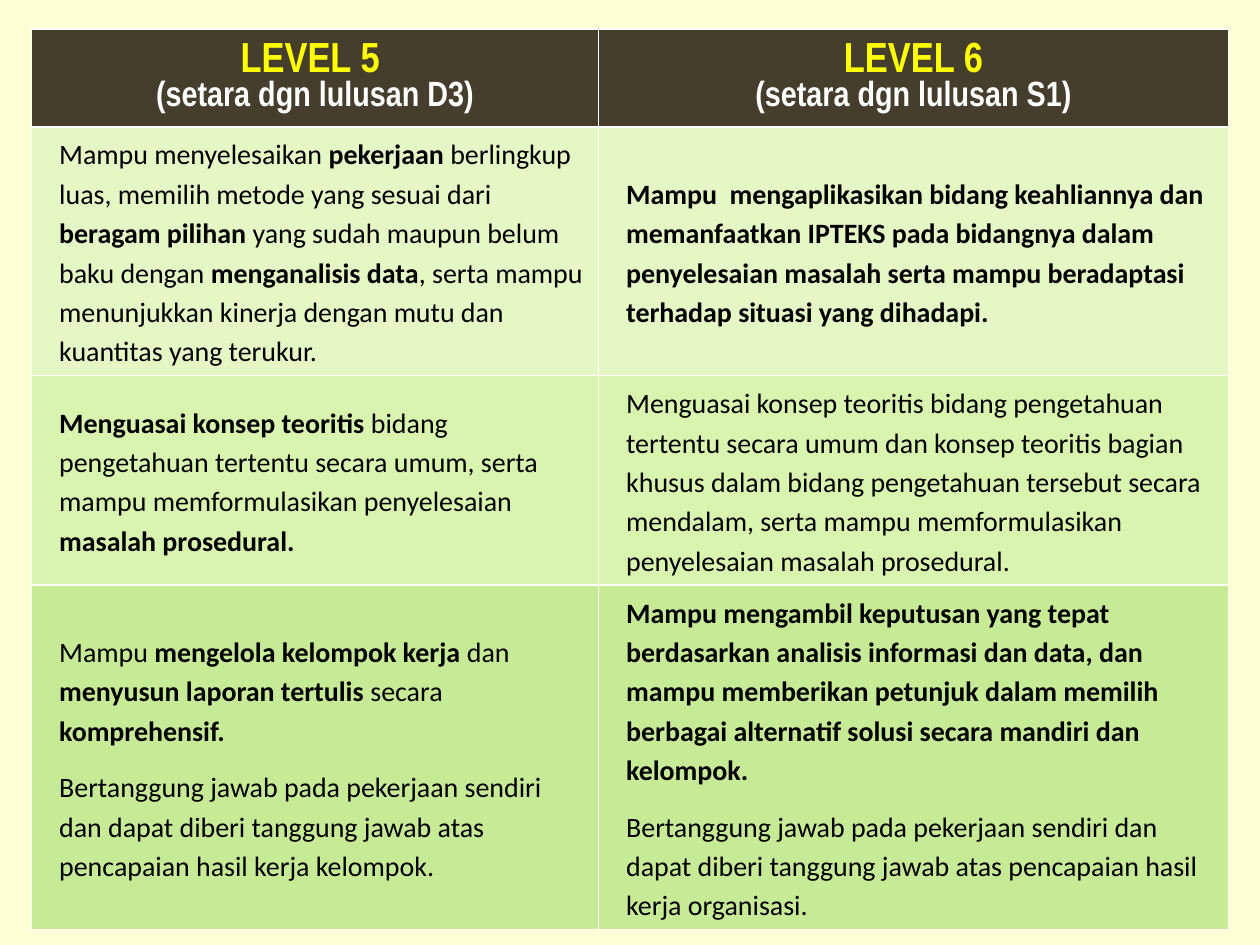
from lxml import etree
from pptx import Presentation
from pptx.dml.color import RGBColor
from pptx.enum.text import MSO_ANCHOR, PP_ALIGN
from pptx.oxml.ns import qn
from pptx.util import Pt

MIDDLE = MSO_ANCHOR.MIDDLE
CENTER = PP_ALIGN.CENTER
BLANK_LAYOUT = 6

COLORS = {
    "background": "FFFFC5",
    "header": "463E2C",
    "level": "FFFF00",
    "white": "FFFFFF",
    "text": "000000",
}
ROW_FILLS = ["E4F7C5", "D9F4AE", "C6EA96"]
COLUMN_WIDTHS = [324, 360]
ROW_HEIGHTS = [56, 142, 119, 197]

HEADERS = [
    ("LEVEL 5 ", "(setara dgn lulusan D3)"),
    ("LEVEL 6", "(setara dgn lulusan S1)"),
]
# Rows of cells, cells of paragraphs; ** switches bold on and off
BODY = [
    [
        ["Mampu menyelesaikan **pekerjaan **berlingkup luas, memilih metode yang "
         "sesuai dari **beragam pilihan** yang sudah maupun belum baku dengan "
         "**menganalisis data**, serta mampu menunjukkan kinerja dengan mutu dan "
         "kuantitas yang terukur."],
        ["**Mampu  mengaplikasikan bidang keahliannya dan memanfaatkan IPTEKS pada "
         "bidangnya dalam penyelesaian masalah serta mampu beradaptasi terhadap "
         "situasi yang dihadapi.**"],
    ],
    [
        ["**Menguasai konsep teoritis **bidang pengetahuan tertentu secara umum, "
         "serta mampu memformulasikan penyelesaian **masalah prosedural.**"],
        ["Menguasai konsep teoritis bidang pengetahuan tertentu secara umum dan "
         "konsep teoritis bagian khusus dalam bidang pengetahuan tersebut secara "
         "mendalam, serta mampu memformulasikan penyelesaian masalah prosedural."],
    ],
    [
        ["Mampu **mengelola kelompok kerja **dan **menyusun laporan tertulis **"
         "secara **komprehensif.**",
         "Bertanggung jawab pada pekerjaan sendiri dan dapat diberi tanggung jawab "
         "atas pencapaian hasil kerja kelompok."],
        ["**Mampu mengambil keputusan yang tepat berdasarkan analisis informasi dan "
         "data, dan mampu memberikan petunjuk dalam memilih berbagai alternatif "
         "solusi secara mandiri dan kelompok.**",
         "Bertanggung jawab pada pekerjaan sendiri dan dapat diberi tanggung jawab "
         "atas pencapaian hasil kerja organisasi."],
    ],
]


def set_font(paragraph, name, size, color):
    font = paragraph.font
    font.name = name
    font.size = Pt(size)
    font.color.rgb = RGBColor.from_string(color)


def add_paragraphs(cell, count):
    frame = cell.text_frame
    return [frame.paragraphs[0]] + [frame.add_paragraph() for _ in range(count - 1)]


def format_cell(cell, fill):
    """Centre the cell vertically and give it white borders and a fill."""
    cell.vertical_anchor = MIDDLE
    properties = cell._tc.get_or_add_tcPr()
    for side in ("lnL", "lnR", "lnT", "lnB"):
        line = etree.SubElement(properties, qn(f"a:{side}"), w=str(Pt(1)))
        solid = etree.SubElement(line, qn("a:solidFill"))
        etree.SubElement(solid, qn("a:srgbClr"), val=COLORS["white"])
    cell.fill.solid()
    cell.fill.fore_color.rgb = RGBColor.from_string(fill)


def fill_header(cell, lines):
    format_cell(cell, COLORS["header"])
    styles = [(24, COLORS["level"]), (20, COLORS["white"])]
    paragraphs = add_paragraphs(cell, len(lines))
    for paragraph, text, (size, color) in zip(paragraphs, lines, styles):
        paragraph.text = text
        paragraph.alignment = CENTER
        set_font(paragraph, "Arial Narrow", size, color)
        paragraph.font.bold = True


def fill_body(cell, texts, fill):
    format_cell(cell, fill)
    for paragraph, text in zip(add_paragraphs(cell, len(texts)), texts):
        paragraph.line_spacing = 1.15
        paragraph.space_after = Pt(10)
        paragraph._p.get_or_add_pPr().set("marL", str(Pt(8.64)))
        set_font(paragraph, "Calibri", 16, COLORS["text"])
        for index, part in enumerate(text.split("**")):
            if part:
                run = paragraph.add_run()
                run.text = part
                run.font.bold = index % 2 == 1


def add_level_table(slide, left, top, width, height):
    frame = slide.shapes.add_table(
        len(ROW_HEIGHTS), len(COLUMN_WIDTHS), Pt(left), Pt(top), Pt(width), Pt(height))
    table = frame.table
    table.horz_banding = False
    for column, column_width in zip(table.columns, COLUMN_WIDTHS):
        column.width = Pt(column_width)
    for row, row_height in zip(table.rows, ROW_HEIGHTS):
        row.height = Pt(row_height)

    for column_index, lines in enumerate(HEADERS):
        fill_header(table.cell(0, column_index), lines)
    for row_index, (cells, fill) in enumerate(zip(BODY, ROW_FILLS), start=1):
        for column_index, texts in enumerate(cells):
            fill_body(table.cell(row_index, column_index), texts, fill)


def set_background(slide):
    """Pale yellow at 70 % opacity."""
    fill = slide.background.fill
    fill.solid()
    fill.fore_color.rgb = RGBColor.from_string(COLORS["background"])
    color = slide.background._cSld.find(".//" + qn("a:srgbClr"))
    etree.SubElement(color, qn("a:alpha"), val="70000")


def main():
    presentation = Presentation()
    presentation.slide_width = Pt(720)
    presentation.slide_height = Pt(540)
    slide = presentation.slides.add_slide(presentation.slide_layouts[BLANK_LAYOUT])
    set_background(slide)
    add_level_table(slide, 18, 16.5, sum(COLUMN_WIDTHS), sum(ROW_HEIGHTS))
    presentation.save("out.pptx")


if __name__ == "__main__":
    main()
